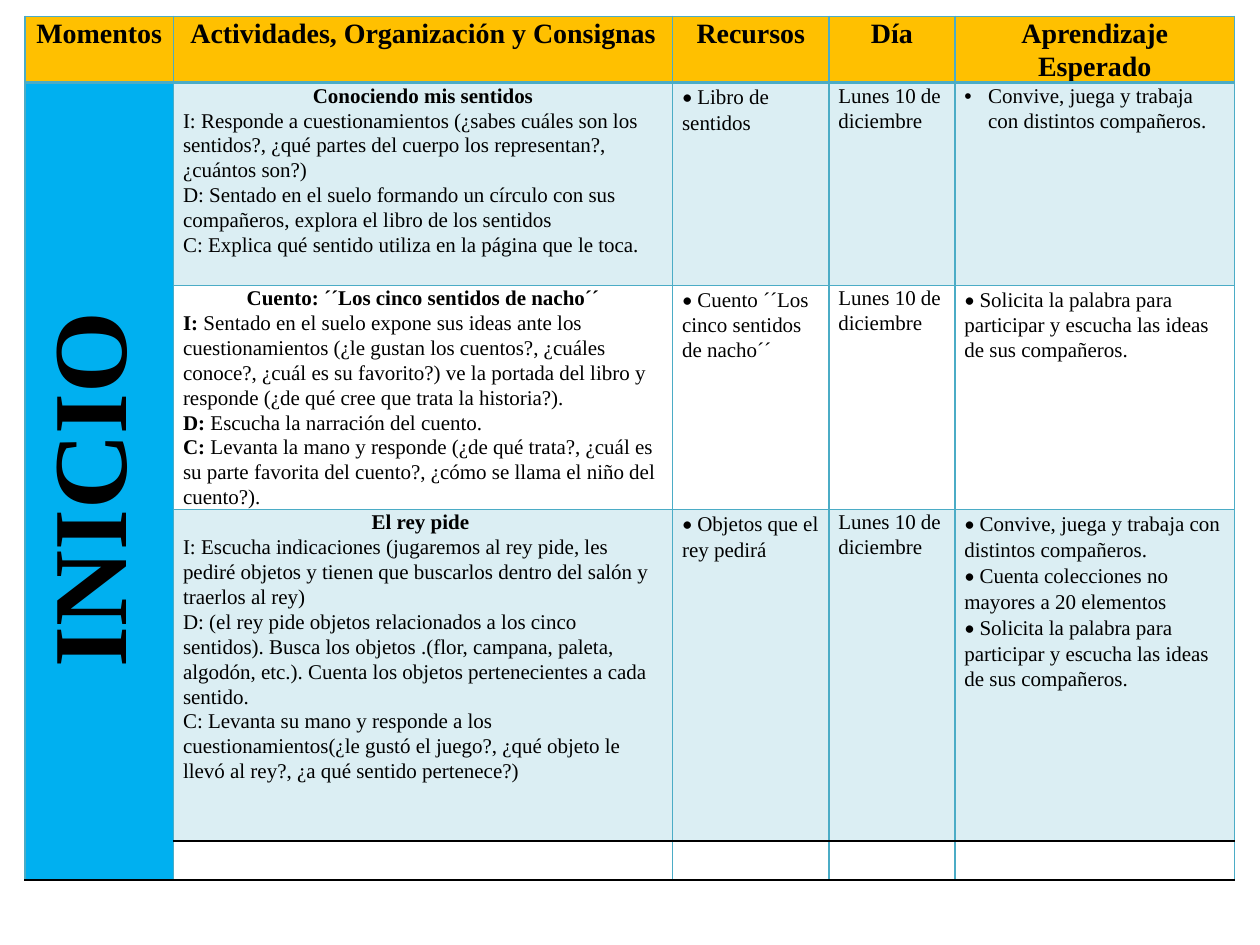
from lxml import etree
from pptx import Presentation
from pptx import util as u
from pptx.dml.color import RGBColor
from pptx.enum import text
from pptx.oxml import ns

BLACK = RGBColor(0, 0, 0)
GOLD = RGBColor(0xFF, 0xC0, 0x00)
SKY = RGBColor(0x00, 0xB0, 0xF0)
TEAL = RGBColor(0x4B, 0xAC, 0xC6)

COLUMN_WIDTHS = [3, 10.06, 3.15, 2.54, 5.64]
ROW_HEIGHTS = [1.32, 4.08, 4.51, 6.69, 0.76]
ROW_EDGES = [(TEAL, 1), (TEAL, 2), (TEAL, 1), (TEAL, 1), (BLACK, 1.5), (BLACK, 1.5)]
INSET = 0.19

HEADINGS = ["Momentos", "Actividades, Organización y Consignas", "Recursos", "Día", "Aprendizaje Esperado"]
DAY = "Lunes 10 de diciembre"
LIVES_TOGETHER = "Convive, juega y trabaja con distintos compañeros."
ASKS_TO_SPEAK = "Solicita la palabra para participar y escucha las ideas de sus compañeros."

ACTIVITIES = [
    ("Conociendo mis sentidos", False, [
        ("I: ", "Responde a cuestionamientos (¿sabes cuáles son los sentidos?, ¿qué partes del cuerpo "
                "los representan?, ¿cuántos son?)"),
        ("D: ", "Sentado en el suelo formando un círculo con sus compañeros, explora el libro de los sentidos"),
        ("C: ", "Explica qué sentido utiliza en la página que le toca."),
    ], "Libro de sentidos", []),
    ("Cuento: ´´Los cinco sentidos de nacho´´", True, [
        ("I: ", "Sentado en el suelo expone sus ideas ante los cuestionamientos (¿le gustan los cuentos?, "
                "¿cuáles conoce?, ¿cuál es su favorito?) ve la portada del libro y responde "
                "(¿de qué cree que trata la historia?)."),
        ("D: ", "Escucha la narración del cuento."),
        ("C: ", "Levanta la mano y responde (¿de qué trata?, ¿cuál es su parte favorita del cuento?, "
                "¿cómo se llama el niño del cuento?)."),
    ], "Cuento ´´Los cinco sentidos de nacho´´", [ASKS_TO_SPEAK]),
    ("El rey pide ", False, [
        ("I: ", "Escucha indicaciones (jugaremos al rey pide, les pediré objetos y tienen que buscarlos "
                "dentro del salón y traerlos al rey)"),
        ("D: ", "(el rey pide objetos relacionados a los cinco sentidos). Busca los objetos .(flor, campana, "
                "paleta, algodón, etc.). Cuenta los objetos pertenecientes a cada sentido."),
        ("C: ", "Levanta su mano y responde a los cuestionamientos(¿le gustó el juego?, "
                "¿qué objeto le llevó al rey?, ¿a qué sentido pertenece?)"),
    ], "Objetos que el rey pedirá",
     [LIVES_TOGETHER, "Cuenta colecciones no mayores a 20 elementos", ASKS_TO_SPEAK]),
]


class Planner:
    font = "Times New Roman"
    bullet_font = "Calibri"
    size = 12
    spacing = 1.07

    def __init__(self, slide):
        self.slide = slide

    def table(self, left, top, widths, heights):
        frame = self.slide.shapes.add_table(
            len(heights), len(widths), u.Cm(left), u.Cm(top), u.Cm(sum(widths)), u.Cm(sum(heights)))
        grid = frame.table
        grid.first_row = grid.horz_banding = False
        for column, width in zip(grid.columns, widths):
            column.width = u.Cm(width)
        for row, height in zip(grid.rows, heights):
            row.height = u.Cm(height)
        return grid

    def fill(self, cell, color=None, opacity=100):
        if color is None:
            cell.fill.background()
            return
        cell.fill.solid()
        cell.fill.fore_color.rgb = color
        if opacity < 100:
            swatch = cell._tc.tcPr.find(".//" + ns.qn("a:srgbClr"))
            etree.SubElement(swatch, ns.qn("a:alpha"), val=str(opacity * 1000))

    def borders(self, cell, top, bottom):
        side = (TEAL, 1)
        edges = {"L": side, "R": side, "T": top, "B": bottom}
        for place, (edge, (color, width)) in enumerate(edges.items()):
            line = etree.Element(ns.qn("a:ln" + edge), w=str(u.Pt(width)))
            paint = etree.SubElement(line, ns.qn("a:solidFill"))
            etree.SubElement(paint, ns.qn("a:srgbClr"), val=str(color))
            cell._tc.tcPr.insert(place, line)

    def insets(self, cell):
        cell.margin_left = cell.margin_right = u.Cm(INSET)
        cell.margin_top = cell.margin_bottom = 0

    def run(self, paragraph, words, bold=False, size=None, font=None):
        run = paragraph.add_run()
        run.text = words
        run.font.name = font or self.font
        run.font.size = u.Pt(size or self.size)
        run.font.bold = bold
        run.font.color.rgb = BLACK

    def paragraph(self, cell, centred=False):
        frame = cell.text_frame
        first = frame.paragraphs[0]
        paragraph = frame.add_paragraph() if first.runs else first
        paragraph.line_spacing = self.spacing
        paragraph.alignment = text.PP_ALIGN.CENTER if centred else text.PP_ALIGN.LEFT
        return paragraph

    def heading(self, cell, words, size=None):
        paragraph = self.paragraph(cell, centred=True)
        self.run(paragraph, words, True, size)
        return paragraph

    def dotted(self, cell, words):
        paragraph = self.paragraph(cell)
        self.run(paragraph, "• ", font=self.bullet_font)
        self.run(paragraph, words)

    def bulleted(self, cell, words):
        paragraph = self.paragraph(cell)
        self.run(paragraph, words)
        layout = paragraph._p.get_or_add_pPr()
        layout.set("marL", str(u.Cm(0.48)))
        layout.set("indent", str(u.Cm(-0.48)))
        etree.SubElement(layout, ns.qn("a:buFont"), typeface="Arial")
        etree.SubElement(layout, ns.qn("a:buChar"), char="•")


def main():
    deck = Presentation()
    deck.slide_width, deck.slide_height = u.Cm(25.4), u.Cm(19.05)
    planner = Planner(deck.slides.add_slide(deck.slide_layouts[6]))
    plan = planner.table(0.5, 0.33, COLUMN_WIDTHS, ROW_HEIGHTS)
    moment = plan.cell(1, 0)
    moment.merge(plan.cell(len(ROW_HEIGHTS) - 1, 0))

    row_fills = [(GOLD, 100), (TEAL, 20), (None, 100), (TEAL, 20), (None, 100)]
    for row, row_fill in enumerate(row_fills):
        for column in range(len(COLUMN_WIDTHS)):
            cell = plan.cell(row, column)
            if cell.is_spanned:
                continue
            planner.insets(cell)
            planner.fill(cell, *((SKY,) if cell.is_merge_origin else row_fill))
            bottom = ROW_EDGES[-1] if cell.is_merge_origin else ROW_EDGES[row + 1]
            planner.borders(cell, ROW_EDGES[row], bottom)

    for column, words in enumerate(HEADINGS):
        planner.heading(plan.cell(0, column), words, 16)

    title = planner.heading(moment, "INICIO ", 60)
    title._p.get_or_add_pPr().set("marL", str(u.Cm(0.2)))
    moment._tc.tcPr.set("vert", "vert270")

    for row, (name, bold_label, steps, resource, outcomes) in enumerate(ACTIVITIES, 1):
        activity = plan.cell(row, 1)
        planner.heading(activity, name)
        for label, step in steps:
            paragraph = planner.paragraph(activity)
            planner.run(paragraph, label, bold_label)
            planner.run(paragraph, step)
        planner.dotted(plan.cell(row, 2), resource)
        planner.run(planner.paragraph(plan.cell(row, 3)), DAY)
        for outcome in outcomes:
            planner.dotted(plan.cell(row, 4), outcome)
    planner.bulleted(plan.cell(1, 4), LIVES_TOGETHER)

    deck.save("out.pptx")


if __name__ == "__main__":
    main()
